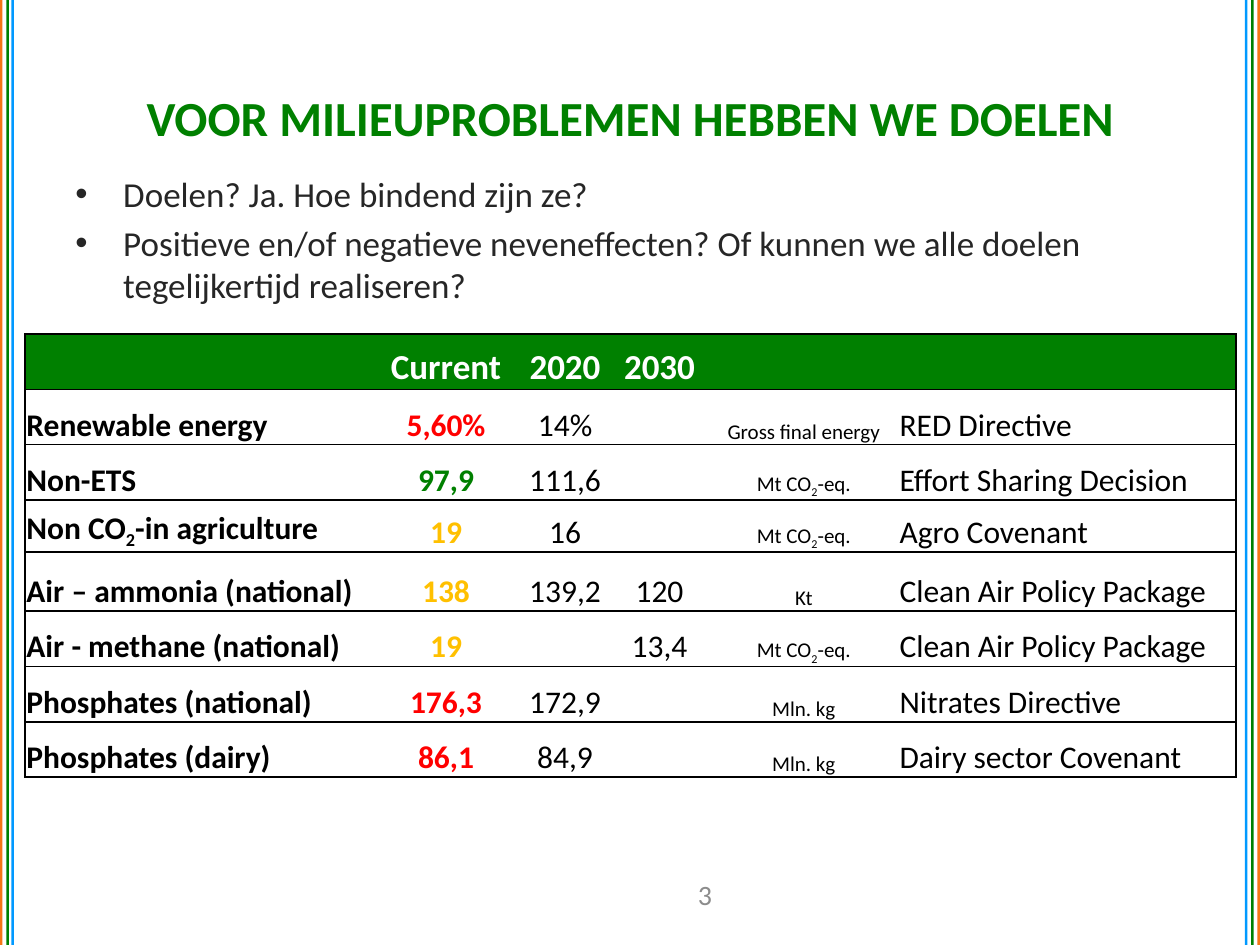
"""Build the slide on environmental targets."""
import pptx
import pptx.util
import pptx.dml.color
import pptx.enum.shapes
import pptx.enum.text
import pptx.oxml
import pptx.oxml.ns

Inches, Pt = pptx.util.Inches, pptx.util.Pt
ALIGN, ANCHOR = pptx.enum.text.PP_ALIGN, pptx.enum.text.MSO_ANCHOR

FONT = "Calibri"
GREEN, RED, AMBER = "008000", "FF0000", "FFC000"
BLACK, WHITE = "000000", "FFFFFF"

STRIPES = [
    ("F67616", 0, 9.98),
    (GREEN, 0.05, 9.93),
    ("0099FF", 0.09, 9.88),
]
TITLE = "VOOR MILIEUPROBLEMEN HEBBEN WE DOELEN"
QUESTIONS = [
    "Doelen? Ja. Hoe bindend zijn ze?",
    "Positieve en/of negatieve neveneffecten? Of kunnen we alle doelen tegelijkertijd realiseren?",
]
MT_CO2 = ("Mt CO", "2", "-eq.")
HEADER = ("", "Current", "2020", "2030", "", "")
TARGETS = [
    (RED, "Renewable energy", "5,60%", "14%", "", "Gross final energy", "RED Directive"),
    (GREEN, "Non-ETS", "97,9", "111,6", "", MT_CO2, "Effort Sharing Decision"),
    (AMBER, ("Non CO", "2", "-in agriculture"), "19", "16", "", MT_CO2, "Agro Covenant"),
    (AMBER, "Air – ammonia (national)", "138", "139,2", "120", "Kt", "Clean Air Policy Package"),
    (AMBER, "Air - methane (national)", "19", "", "13,4", MT_CO2, "Clean Air Policy Package"),
    (RED, "Phosphates (national)", "176,3", "172,9", "", "Mln. kg", "Nitrates Directive"),
    (RED, "Phosphates (dairy)", "86,1", "84,9", "", "Mln. kg", "Dairy sector Covenant"),
]
COLUMN_WIDTHS = [2.75, 1.18, 0.71, 0.79, 1.5, 2.68]
ROW_HEIGHTS = [0.44, 0.44, 0.44, 0.41, 0.47, 0.44, 0.44, 0.44]
LABEL, CURRENT, UNIT, POLICY = 0, 1, 4, 5


def rgb(color):
    return pptx.dml.color.RGBColor.from_string(color)


def add_runs(paragraph, parts, size, color, bold=False):
    for index, part in enumerate((parts,) if isinstance(parts, str) else parts):
        run = paragraph.add_run()
        run.text = part
        run.font.name, run.font.size, run.font.bold = FONT, Pt(size), bold
        run.font.color.rgb = rgb(color)
        if index == 1:
            run.font._element.set("baseline", "-25000")


def add_box(slide, left, top, width, height, anchor):
    frame = slide.shapes.add_textbox(*map(Inches, (left, top, width, height))).text_frame
    frame.word_wrap = True
    frame.vertical_anchor = anchor
    return frame


def add_centred_line(slide, place, text, size, color, bold=False):
    paragraph = add_box(slide, *place, ANCHOR.MIDDLE).paragraphs[0]
    paragraph.alignment = ALIGN.CENTER
    add_runs(paragraph, text, size, color, bold)


def add_bullet(paragraph):
    properties = paragraph._p.get_or_add_pPr()
    properties.set("marL", str(Inches(0.38)))
    properties.set("indent", str(-Inches(0.38)))
    namespace = pptx.oxml.ns.nsdecls("a")
    properties.append(pptx.oxml.parse_xml(f'<a:buFont {namespace} typeface="Arial"/>'))
    properties.append(pptx.oxml.parse_xml(f'<a:buChar {namespace} char="•"/>'))


def set_borders(cell, sides):
    properties = cell._tc.get_or_add_tcPr()
    for side in "LRTB":
        paint = f'<a:solidFill><a:srgbClr val="{BLACK}"/></a:solidFill>' if side in sides else "<a:noFill/>"
        properties.append(pptx.oxml.parse_xml(
            f'<a:ln{side} {pptx.oxml.ns.nsdecls("a")} w="{Pt(1)}">{paint}</a:ln{side}>'))


def fill_cell(cell, column, content, fill, size, color, bold):
    set_borders(cell, {LABEL: "LTB", POLICY: "RTB"}.get(column, "TB"))
    cell.fill.solid()
    cell.fill.fore_color.rgb = rgb(fill)
    cell.margin_left = cell.margin_right = cell.margin_top = Inches(0.01)
    cell.margin_bottom = 0
    cell.vertical_anchor = ANCHOR.BOTTOM
    if content:
        paragraph = cell.text_frame.paragraphs[0]
        paragraph.alignment = ALIGN.LEFT if column in (LABEL, POLICY) else ALIGN.CENTER
        add_runs(paragraph, content, size, color, bold)


def add_targets_table(slide):
    table = slide.shapes.add_table(
        len(ROW_HEIGHTS), len(COLUMN_WIDTHS), Inches(0.2), Inches(2.65),
        Inches(sum(COLUMN_WIDTHS)), Inches(sum(ROW_HEIGHTS))).table
    table.first_row = table.horz_banding = False
    for column, width in zip(table.columns, COLUMN_WIDTHS):
        column.width = Inches(width)
    for row, height in zip(table.rows, ROW_HEIGHTS):
        row.height = Inches(height)
    for column, heading in enumerate(HEADER):
        fill_cell(table.cell(0, column), column, heading, GREEN, 20, WHITE, True)
    for row, (status, *contents) in enumerate(TARGETS, 1):
        for column, content in enumerate(contents):
            fill_cell(table.cell(row, column), column, content, WHITE,
                      12 if column == UNIT else 18,
                      status if column == CURRENT else BLACK,
                      column in (LABEL, CURRENT))


def main():
    deck = pptx.Presentation()
    deck.slide_width, deck.slide_height = Inches(10), Inches(7.5)
    slide = deck.slides.add_slide(deck.slide_layouts[6])

    for color, *edges in STRIPES:
        for left in edges:
            stripe = slide.shapes.add_shape(
                pptx.enum.shapes.MSO_SHAPE.RECTANGLE, Inches(left), 0, Inches(0.02), Inches(7.5))
            stripe.shadow.inherit = False
            stripe.fill.solid()
            stripe.fill.fore_color.rgb = rgb(color)
            stripe.line.fill.background()

    add_centred_line(slide, (0.5, 0.3, 9, 1.25), TITLE, 28, GREEN, True)
    add_centred_line(slide, (5.16, 6.9, 0.87, 0.4), "3", 16, "8C8C8C")

    body = add_box(slide, 0.5, 1.32, 9, 4.95, ANCHOR.TOP)
    for index, question in enumerate(QUESTIONS):
        paragraph = body.add_paragraph() if index else body.paragraphs[0]
        add_bullet(paragraph)
        paragraph.space_before = Pt(4 if index else 0)
        add_runs(paragraph, question, 20, "262626")

    add_targets_table(slide)
    deck.save("out.pptx")


if __name__ == "__main__":
    main()
